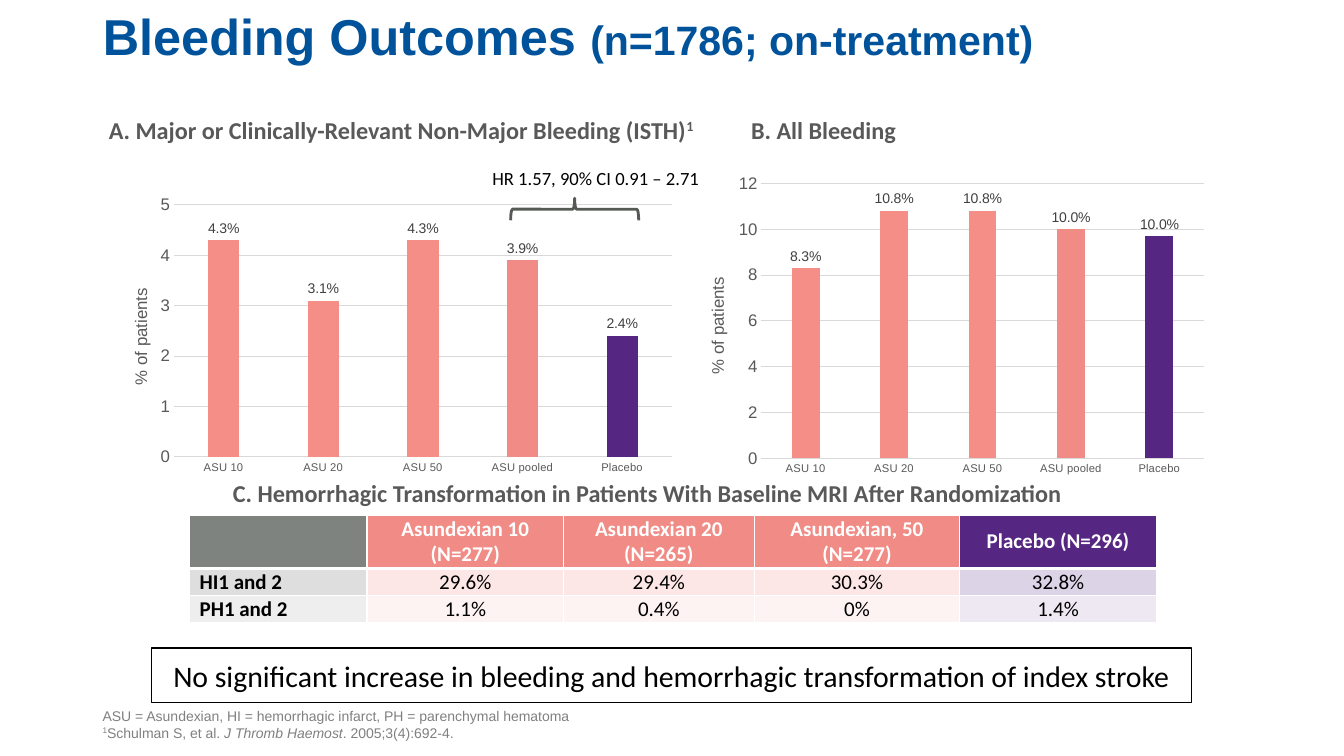
from lxml import etree
from pptx import Presentation
from pptx.chart.data import CategoryChartData
from pptx.dml.color import RGBColor
from pptx.enum.chart import XL_CHART_TYPE as ChartType, XL_LABEL_POSITION as LabelPos, XL_TICK_MARK as Tick
from pptx.enum.shapes import MSO_SHAPE as Shape
from pptx.enum.text import MSO_ANCHOR as Anchor, PP_ALIGN as Align
from pptx.oxml.ns import qn
from pptx.util import Inches, Pt

BLUE = RGBColor(0x00, 0x53, 0x9B)
CORAL = RGBColor(0xF5, 0x8E, 0x87)
DARK_CORAL = RGBColor(0xF1, 0x8B, 0x85)
PURPLE = RGBColor(0x55, 0x26, 0x82)
SLATE = RGBColor(0x55, 0x5A, 0x55)
LABEL_GREY = RGBColor(0x40, 0x40, 0x40)
TEXT_GREY = RGBColor(0x59, 0x59, 0x59)
NOTE_GREY = RGBColor(0x80, 0x80, 0x80)
GRID_GREY = RGBColor(0xD9, 0xD9, 0xD9)
BLACK = RGBColor(0, 0, 0)
WHITE = RGBColor(0xFF, 0xFF, 0xFF)

DOSES = ["ASU 10", "ASU 20", "ASU 50", "ASU pooled", "Placebo"]
TRANSFORMATION = [
    ["", "Asundexian 10 (N=277)", "Asundexian 20 (N=265)", "Asundexian, 50 (N=277)", "Placebo (N=296)"],
    ["HI1 and 2", "29.6%", "29.4%", "30.3%", "32.8%"],
    ["PH1 and 2", "1.1%", "0.4%", "0%", "1.4%"],
]
COLUMN_WIDTHS = [1.76, 1.95, 1.89, 2.04, 1.95]
ROW_HEIGHTS = [0.53, 0.27, 0.27]


def style(font, size, color, name="Calibri", bold=False):
    font.size, font.name, font.bold = Pt(size), name, bold
    font.color.rgb = color


def style_runs(paragraph, *look, **options):
    for run in paragraph.runs:
        style(run.font, *look, **options)


def superscript(run):
    run.font._element.set("baseline", "30000")


def add_text(slide, box, text, *look, align=Align.LEFT, **options):
    frame = slide.shapes.add_textbox(*map(Inches, box)).text_frame
    frame.word_wrap = True
    frame.text = text
    for paragraph in frame.paragraphs:
        paragraph.alignment = align
        style_runs(paragraph, *look, **options)
    return frame


def add_title(slide, box):
    title = slide.shapes.title
    title.left, title.top, title.width, title.height = map(Inches, box)
    frame = title.text_frame
    frame.vertical_anchor = Anchor.TOP
    frame.margin_top = Inches(0.12)
    heading = frame.paragraphs[0]
    heading.alignment, heading.line_spacing = Align.LEFT, 0.9
    for text, size in (("Bleeding Outcomes ", 36), ("(n=1786; on-treatment)", 29.3)):
        run = heading.add_run()
        run.text = text
        style(run.font, size, BLUE, "Arial", bold=True)


def add_heading(slide, box, text, note=""):
    frame = add_text(slide, box, text, 17.3, TEXT_GREY, bold=True)
    frame.margin_left = Inches(0.16)
    if note:
        mark = frame.paragraphs[0].add_run()
        mark.text = note
        style(mark.font, 17.3, TEXT_GREY, bold=True)
        superscript(mark)


def set_layout(parent, **values):
    """Place a chart part by fractions of the chart's size."""
    layout = parent.find(qn("c:layout"))
    if layout is None:
        layout = etree.Element(qn("c:layout"))
        parent.insert(0, layout)
    manual = etree.SubElement(layout, qn("c:manualLayout"))
    for tag, value in values.items():
        etree.SubElement(manual, qn("c:" + tag)).set("val", str(value))


def add_bleeding_chart(slide, box, rates, top, step, plot_box, title_x, placebo_label=None):
    data = CategoryChartData()
    data.categories = DOSES
    data.add_series("Series 1", rates)
    chart = slide.shapes.add_chart(ChartType.COLUMN_CLUSTERED, *map(Inches, box), data).chart
    chart.has_legend = chart.has_title = False
    style(chart.font, 10, BLACK, "Arial")
    x, y, w, h = plot_box
    set_layout(chart._chartSpace.find(".//" + qn("c:plotArea")), layoutTarget="inner",
               xMode="edge", yMode="edge", x=x, y=y, w=w, h=h)

    # Axes
    dose_axis, rate_axis = chart.category_axis, chart.value_axis
    for axis, size in ((dose_axis, 8), (rate_axis, 12)):
        axis.major_tick_mark = axis.minor_tick_mark = Tick.NONE
        style(axis.tick_labels.font, size, TEXT_GREY, "Arial")
    rate_axis.minimum_scale, rate_axis.maximum_scale, rate_axis.major_unit = 0, top, step
    rate_axis.format.line.fill.background()
    for line in (dose_axis.format.line, rate_axis.major_gridlines.format.line):
        line.color.rgb, line.width = GRID_GREY, Pt(0.75)
    rate_title = rate_axis.axis_title
    rate_title.text_frame.text = "% of patients"
    style_runs(rate_title.text_frame.paragraphs[0], 12, TEXT_GREY, name="Arial")
    set_layout(rate_title._element, xMode="edge", yMode="edge", x=title_x, y=0.33)

    # Columns and their labels
    plot = chart.plots[0]
    plot.gap_width, plot.overlap, plot.vary_by_categories = 219, -27, False
    series = plot.series[0]
    series.format.fill.solid()
    series.format.fill.fore_color.rgb = CORAL
    for index, color in ((3, DARK_CORAL), (4, PURPLE)):
        fill = series.points[index].format.fill
        fill.solid()
        fill.fore_color.rgb = color
    labels = series.data_labels
    labels.show_value, labels.position = True, LabelPos.OUTSIDE_END
    labels.number_format, labels.number_format_is_linked = '0.0"%"', False
    style(labels.font, 10, LABEL_GREY, "Arial")
    if placebo_label:
        label = series.points[4].data_label
        label.text_frame.text = placebo_label
        style_runs(label.text_frame.paragraphs[0], 10, LABEL_GREY, name="Arial")
        label.position = LabelPos.OUTSIDE_END


def add_hazard_ratio(slide, box):
    left, top, width, height = box
    add_text(slide, box, "HR 1.57, 90% CI 0.91 – 2.71", 13.3, BLACK, align=Align.CENTER)
    brace = slide.shapes.add_shape(Shape.RIGHT_BRACE, Inches(left + 0.94), Inches(top - 0.17),
                                   Inches(0.22), Inches(1.27))
    brace.rotation = 270
    brace.shadow.inherit = False
    brace.fill.background()
    brace.line.color.rgb, brace.line.width = SLATE, Pt(2)


def format_cell(cell, color, opacity, bottom_width):
    cell.margin_top = cell.margin_bottom = 0
    cell.vertical_anchor = Anchor.MIDDLE
    cell.fill.solid()
    cell.fill.fore_color.rgb = color
    properties = cell._tc.get_or_add_tcPr()
    tint = properties.find(qn("a:solidFill")).find(qn("a:srgbClr"))
    etree.SubElement(tint, qn("a:alpha")).set("val", str(opacity * 1000))
    for position, side in enumerate("LRTB"):
        border = etree.Element(qn("a:ln" + side), w=str(Pt(bottom_width if side == "B" else 1)))
        fill = etree.SubElement(border, qn("a:solidFill"))
        etree.SubElement(fill, qn("a:srgbClr")).set("val", str(WHITE))
        properties.insert(position, border)


def add_transformation_table(slide, left, top):
    table = slide.shapes.add_table(len(ROW_HEIGHTS), len(COLUMN_WIDTHS), Inches(left), Inches(top),
                                   Inches(sum(COLUMN_WIDTHS)), Inches(sum(ROW_HEIGHTS))).table
    table.horz_banding = False
    for column, width in zip(table.columns, COLUMN_WIDTHS):
        column.width = Inches(width)
    column_colors = [SLATE] + [DARK_CORAL] * 3 + [PURPLE]
    for r, (values, height) in enumerate(zip(TRANSFORMATION, ROW_HEIGHTS)):
        table.rows[r].height = Inches(height)
        for c, (value, color) in enumerate(zip(values, column_colors)):
            cell = table.cell(r, c)
            opacity = (75 if c == 0 else 100, 20, 10)[r]
            format_cell(cell, color, opacity, 3 if r == 0 else 1)
            cell.text = value
            paragraph = cell.text_frame.paragraphs[0]
            paragraph.alignment = Align.CENTER if c else Align.LEFT
            style_runs(paragraph, 15, BLACK if r else WHITE, bold=r == 0 or c == 0)


def add_conclusion(slide, box):
    conclusion = slide.shapes.add_shape(Shape.RECTANGLE, *map(Inches, box))
    conclusion.shadow.inherit = False
    conclusion.fill.background()
    conclusion.line.color.rgb, conclusion.line.width = BLACK, Pt(1)
    frame = conclusion.text_frame
    frame.text = "No significant increase in bleeding and hemorrhagic transformation of index stroke"
    frame.vertical_anchor = Anchor.MIDDLE
    frame.paragraphs[0].alignment = Align.CENTER
    style_runs(frame.paragraphs[0], 21.3, BLACK)


def add_footnotes(slide, box):
    frame = add_text(slide, box, "ASU = Asundexian, HI = hemorrhagic infarct, PH = parenchymal hematoma",
                     10, NOTE_GREY, name="Arial")
    frame.vertical_anchor = Anchor.BOTTOM
    citation = frame.add_paragraph()
    for text in ("1", "Schulman S, et al. ", "J Thromb Haemost", ". 2005;3(4):692-4."):
        citation.add_run().text = text
    style_runs(citation, 10, NOTE_GREY, name="Arial")
    superscript(citation.runs[0])
    citation.runs[2].font.italic = True


def main():
    deck = Presentation()
    deck.slide_width, deck.slide_height = Inches(13.33), Inches(7.5)
    slide = deck.slides.add_slide(deck.slide_layouts[5])
    add_title(slide, (0.92, 0, 11.5, 1.21))
    add_bleeding_chart(slide, (0.92, 1.82, 5.75, 3.05), (4.3, 3.1, 4.3, 3.9, 2.4), 5, 1,
                       (0.14, 0.07, 0.86, 0.82), 0.06)
    add_hazard_ratio(slide, (4.65, 1.61, 2.52, 0.33))
    add_bleeding_chart(slide, (6.83, 1.66, 5.16, 3.21), (8.3, 10.8, 10.8, 10.0, 9.7), 12, 2,
                       (0.14, 0.05, 0.85, 0.85), 0.03, placebo_label="10.0%")
    add_heading(slide, (0.92, 1.09, 6.3, 0.39), "A. Major or Clinically-Relevant Non-Major Bleeding (ISTH)", "1")
    add_heading(slide, (7.29, 1.09, 5.5, 0.39), "B. All Bleeding")
    add_heading(slide, (2.15, 4.7, 9.66, 0.39),
                "C. Hemorrhagic Transformation in Patients With Baseline MRI After Randomization")
    add_transformation_table(slide, 1.88, 5.11)
    add_conclusion(slide, (1.5, 6.43, 10.32, 0.54))
    add_footnotes(slide, (0.92, 7, 11.5, 0.4))
    deck.save("out.pptx")


if __name__ == "__main__":
    main()
